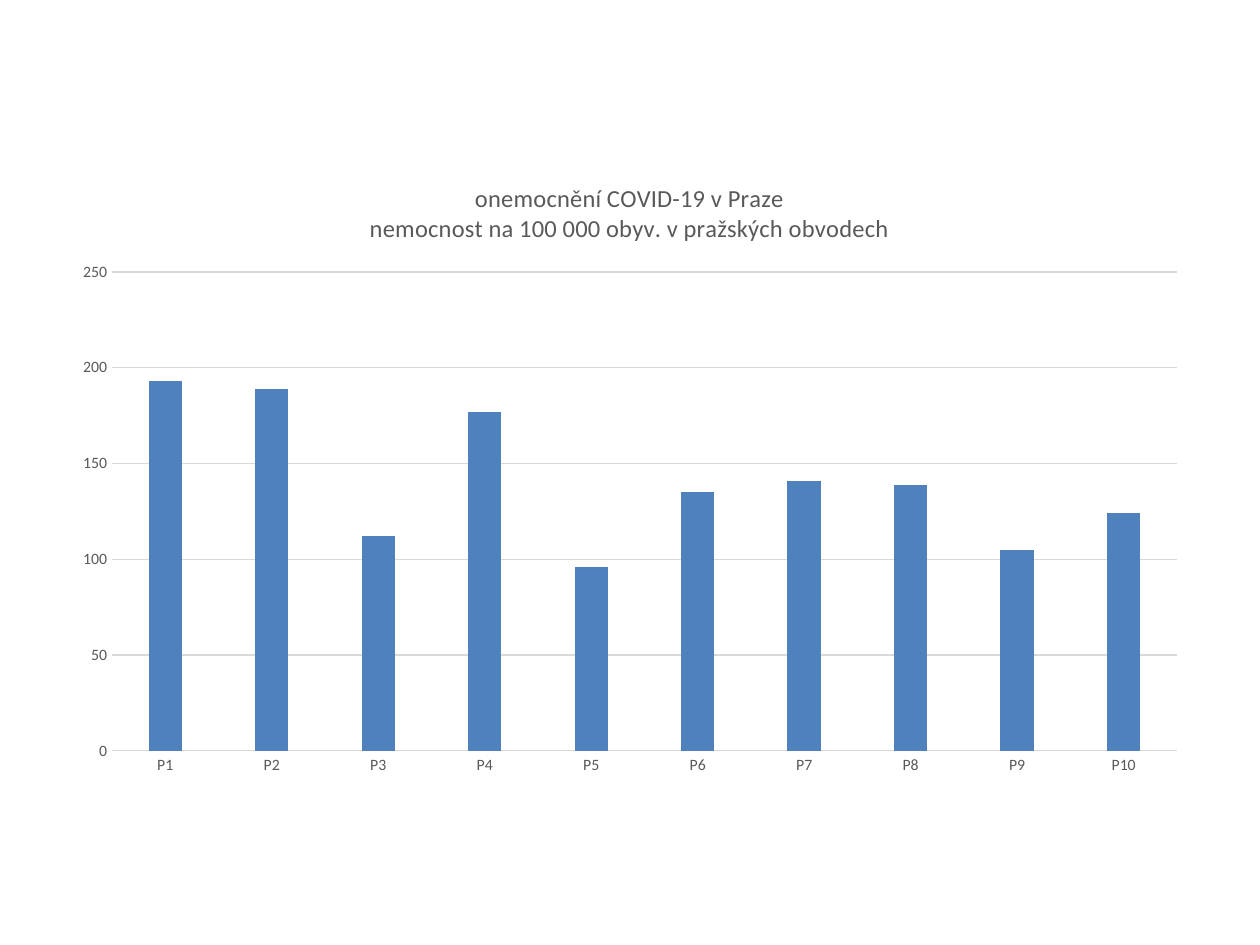
from dataclasses import dataclass

from lxml import etree
from pptx import Presentation
from pptx.chart.data import CategoryChartData
from pptx.dml.color import RGBColor
from pptx.enum.chart import XL_CHART_TYPE, XL_TICK_MARK
from pptx.oxml.ns import qn
from pptx.util import Emu, Pt

COLUMN = XL_CHART_TYPE.COLUMN_CLUSTERED
NO_TICK = XL_TICK_MARK.NONE
DPI = 126
FACE = "Calibri"
COLORS = {"bar": "4F81BD", "text": "595959", "grid": "D9D9D9"}
TITLE = ["onemocnění COVID-19 v Praze", "nemocnost na 100 000 obyv. v pražských obvodech"]
RATES = [193, 189, 112, 177, 96, 135, 141, 139, 105, 124]


@dataclass
class Box:
    x: int
    y: int
    w: int
    h: int


FRAME = Box(60, 158, 1139, 629)
PLOT = Box(112, 272, 1065, 479)


def px(n: int) -> Emu:
    return Emu(n * 914400 // DPI)


def color(name: str) -> RGBColor:
    return RGBColor.from_string(COLORS[name])


def style(font, size: int) -> None:
    font.name = FACE
    font.size = Pt(size)
    font.bold = False
    font.color.rgb = color("text")


def rule(line) -> None:
    line.color.rgb = color("grid")
    line.width = Pt(0.75)


def set_axis(axis) -> None:
    axis.major_tick_mark = NO_TICK
    axis.minor_tick_mark = NO_TICK
    style(axis.tick_labels.font, 9)


def set_title(chart) -> None:
    frame = chart.chart_title.text_frame
    frame.text = TITLE[0]
    for text in TITLE[1:]:
        frame.add_paragraph().text = text
    for para in frame.paragraphs:
        for run in para.runs:
            style(run.font, 14)
    chart.chart_title.include_in_layout = False


def set_plot(chart, frame: Box, plot: Box) -> None:
    area = chart.element.find(".//" + qn("c:plotArea"))
    for old in area.findall(qn("c:layout")):
        area.remove(old)
    layout = etree.Element(qn("c:layout"))
    area.insert(0, layout)
    manual = etree.SubElement(layout, qn("c:manualLayout"))
    items = {
        "layoutTarget": "inner",
        "xMode": "edge",
        "yMode": "edge",
        "x": (plot.x - frame.x) / frame.w,
        "y": (plot.y - frame.y) / frame.h,
        "w": plot.w / frame.w,
        "h": plot.h / frame.h,
    }
    for tag, val in items.items():
        etree.SubElement(manual, qn(f"c:{tag}"), val=str(val))


def add_bars(slide, box: Box) -> None:
    data = CategoryChartData()
    data.categories = [f"P{n}" for n in range(1, len(RATES) + 1)]
    data.add_series("Series 1", RATES)
    spot = (px(n) for n in (box.x, box.y, box.w, box.h))
    chart = slide.shapes.add_chart(COLUMN, *spot, data).chart
    style(chart.font, 10)
    chart.has_legend = False
    set_title(chart)
    set_plot(chart, box, PLOT)

    plot = chart.plots[0]
    plot.gap_width = 219
    plot.overlap = -27
    plot.vary_by_categories = False
    fill = plot.series[0].format.fill
    fill.solid()
    fill.fore_color.rgb = color("bar")

    set_axis(chart.category_axis)
    rule(chart.category_axis.format.line)
    scale = chart.value_axis
    set_axis(scale)
    scale.format.line.fill.background()
    scale.minimum_scale = 0
    scale.maximum_scale = 250
    scale.major_unit = 50
    scale.has_major_gridlines = True
    rule(scale.major_gridlines.format.line)


def main() -> None:
    deck = Presentation()
    deck.slide_width = px(1260)
    deck.slide_height = px(945)
    slide = deck.slides.add_slide(deck.slide_layouts[6])
    add_bars(slide, FRAME)
    deck.save("out.pptx")


if __name__ == "__main__":
    main()
